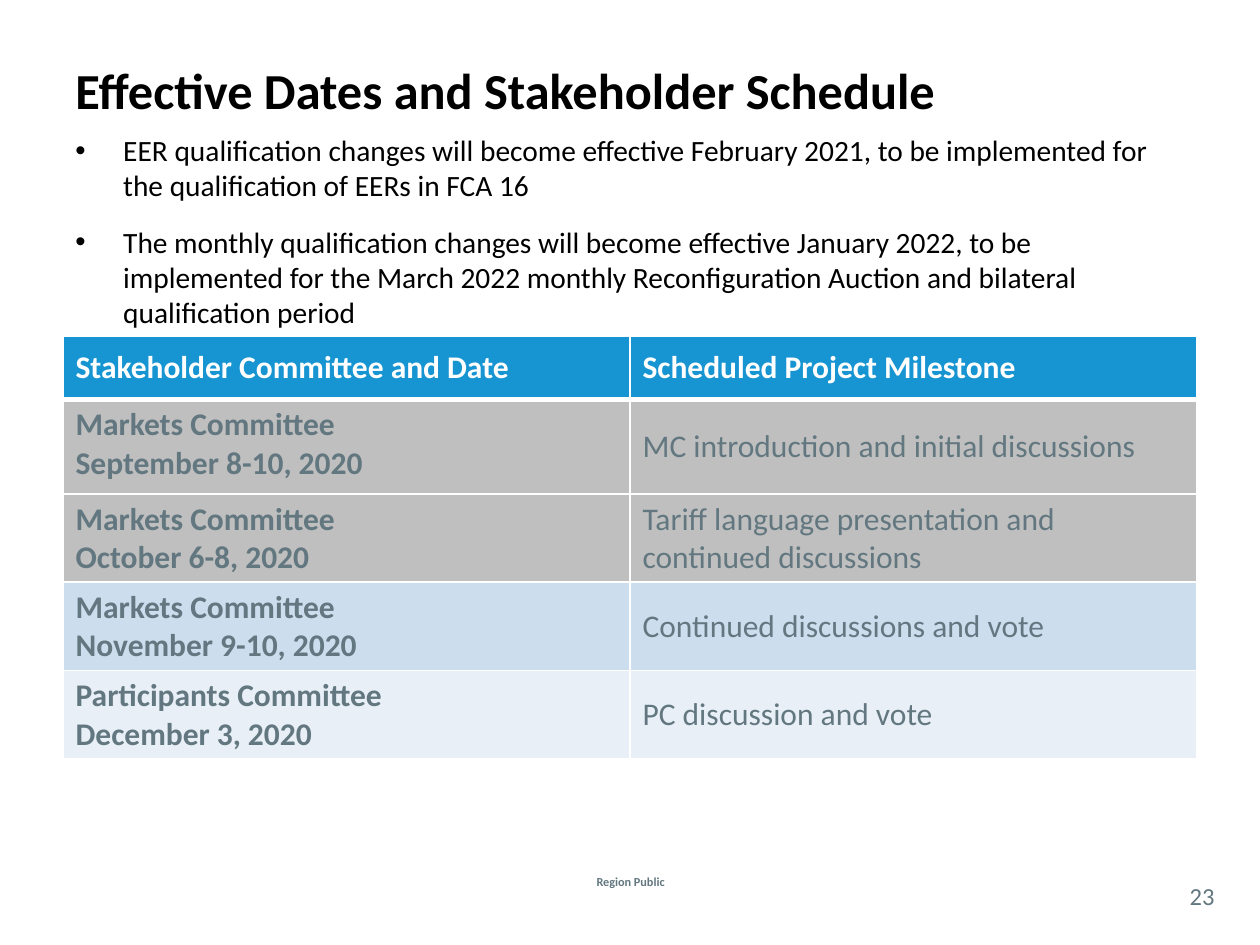
from typing import NamedTuple

from lxml import etree
from pptx import Presentation
from pptx.dml.color import RGBColor
from pptx.enum.text import MSO_ANCHOR, PP_ALIGN
from pptx.oxml.ns import qn
from pptx.util import Inches, Pt

MIDDLE, TOP = MSO_ANCHOR.MIDDLE, MSO_ANCHOR.TOP
LEFT, CENTER = PP_ALIGN.LEFT, PP_ALIGN.CENTER
FONT = "Calibri"
BLACK, WHITE, SLATE = "000000", "FFFFFF", "62777F"
BLUE, GRAY, LIGHT_BLUE, PALE_BLUE = "1795D2", "BFBFBF", "CCDDEE", "E8EFF7"


class TextItem(NamedTuple):
    text: str
    box: tuple[float, float, float, float]
    size: float
    color: str
    bold: bool = False
    align: PP_ALIGN = LEFT
    inset: bool = True


class Meeting(NamedTuple):
    committee: str
    date: str
    milestone: str
    fill: str
    height: float


TEXT_ITEMS = [
    TextItem("Region Public", (4.27, 6.75, 1.47, 0.5), 7, SLATE, True, CENTER),
    TextItem("Effective Dates and Stakeholder Schedule", (0.5, 0.42, 9, 0.58), 28.8, BLACK, True),
    TextItem("23", (9.33, 6.96, 0.42, 0.29), 14, SLATE, False, CENTER, False),
]
BULLETS = [
    "EER qualification changes will become effective February 2021, to be implemented for "
    "the qualification of EERs in FCA 16",
    "The monthly qualification changes will become effective January 2022, to be implemented "
    "for the March 2022 monthly Reconfiguration Auction and bilateral qualification period",
]
HEADERS = ["Stakeholder Committee and Date", "Scheduled Project Milestone"]
HEADER_HEIGHT = 0.5
MEETINGS = [
    Meeting("Markets Committee", "September 8-10, 2020",
            "MC introduction and initial discussions", GRAY, 0.75),
    Meeting("Markets Committee", "October 6-8, 2020",
            "Tariff language presentation and continued discussions", GRAY, 0.7),
    Meeting("Markets Committee", "November 9-10, 2020",
            "Continued discussions and vote", LIGHT_BLUE, 0.7),
    Meeting("Participants Committee", "December 3, 2020",
            "PC discussion and vote", PALE_BLUE, 0.7),
]


def rgb(color: str) -> RGBColor:
    return RGBColor.from_string(color)


def set_font(paragraph, size: float, color: str, bold: bool = False) -> None:
    font = paragraph.font
    font.name, font.size, font.bold = FONT, Pt(size), bold
    font.color.rgb = rgb(color)


def add_box(slide, box: tuple[float, float, float, float]):
    frame = slide.shapes.add_textbox(*map(Inches, box)).text_frame
    frame.word_wrap = True
    return frame


def add_text(slide, item: TextItem) -> None:
    frame = add_box(slide, item.box)
    frame.vertical_anchor = MIDDLE
    if not item.inset:
        frame.margin_left = frame.margin_right = frame.margin_top = frame.margin_bottom = 0
    paragraph = frame.paragraphs[0]
    paragraph.text, paragraph.alignment = item.text, item.align
    set_font(paragraph, item.size, item.color, item.bold)


def add_bullets(slide, bullets: list[str]) -> None:
    frame = add_box(slide, (0.5, 1, 9, 1.42))
    for index, text in enumerate(bullets):
        paragraph = frame.add_paragraph() if index else frame.paragraphs[0]
        paragraph.text = text
        properties = paragraph._p.get_or_add_pPr()
        properties.set("marL", str(Inches(0.38)))
        properties.set("indent", str(Inches(-0.38)))
        if index:
            paragraph.space_before = Pt(12)
        etree.SubElement(properties, qn("a:buFont"), typeface="Arial")
        etree.SubElement(properties, qn("a:buChar"), char="•")
        set_font(paragraph, 16.8, BLACK)


def set_borders(cell, top: float, bottom: float) -> None:
    properties = cell._tc.get_or_add_tcPr()
    widths = {"a:lnL": 1, "a:lnR": 1, "a:lnT": top, "a:lnB": bottom}
    for position, (tag, width) in enumerate(widths.items()):
        line = etree.Element(qn(tag), w=str(Pt(width)))
        fill = etree.SubElement(line, qn("a:solidFill"))
        etree.SubElement(fill, qn("a:srgbClr"), val=WHITE)
        properties.insert(position, line)


def fill_cell(cell, lines: list[str], fill: str, color: str, bold: bool,
              anchor: MSO_ANCHOR, top: float = 1, bottom: float = 1) -> None:
    cell.text = "\n".join(lines)
    cell.vertical_anchor = anchor
    cell.fill.solid()
    cell.fill.fore_color.rgb = rgb(fill)
    for paragraph in cell.text_frame.paragraphs:
        set_font(paragraph, 18, color, bold)
    set_borders(cell, top, bottom)


def add_schedule(slide) -> None:
    heights = [HEADER_HEIGHT] + [meeting.height for meeting in MEETINGS]
    table = slide.shapes.add_table(
        len(heights), len(HEADERS), Inches(0.5), Inches(2.67), Inches(9), Inches(sum(heights))
    ).table
    for row, height in zip(table.rows, heights):
        row.height = Inches(height)
    for column, header in enumerate(HEADERS):
        fill_cell(table.cell(0, column), [header], BLUE, WHITE, True, MIDDLE, bottom=3)
    for row, meeting in enumerate(MEETINGS, start=1):
        top = 3 if row == 1 else 1
        fill_cell(table.cell(row, 0), [meeting.committee, meeting.date],
                  meeting.fill, SLATE, True, TOP, top)
        fill_cell(table.cell(row, 1), [meeting.milestone],
                  meeting.fill, SLATE, False, MIDDLE, top)


def main() -> None:
    presentation = Presentation()
    presentation.slide_width, presentation.slide_height = Inches(10), Inches(7.5)
    slide = presentation.slides.add_slide(presentation.slide_layouts[6])

    # Footer, title and page number
    for item in TEXT_ITEMS:
        add_text(slide, item)

    # Effective dates
    add_bullets(slide, BULLETS)

    # Stakeholder schedule
    add_schedule(slide)

    presentation.save("out.pptx")


if __name__ == "__main__":
    main()
